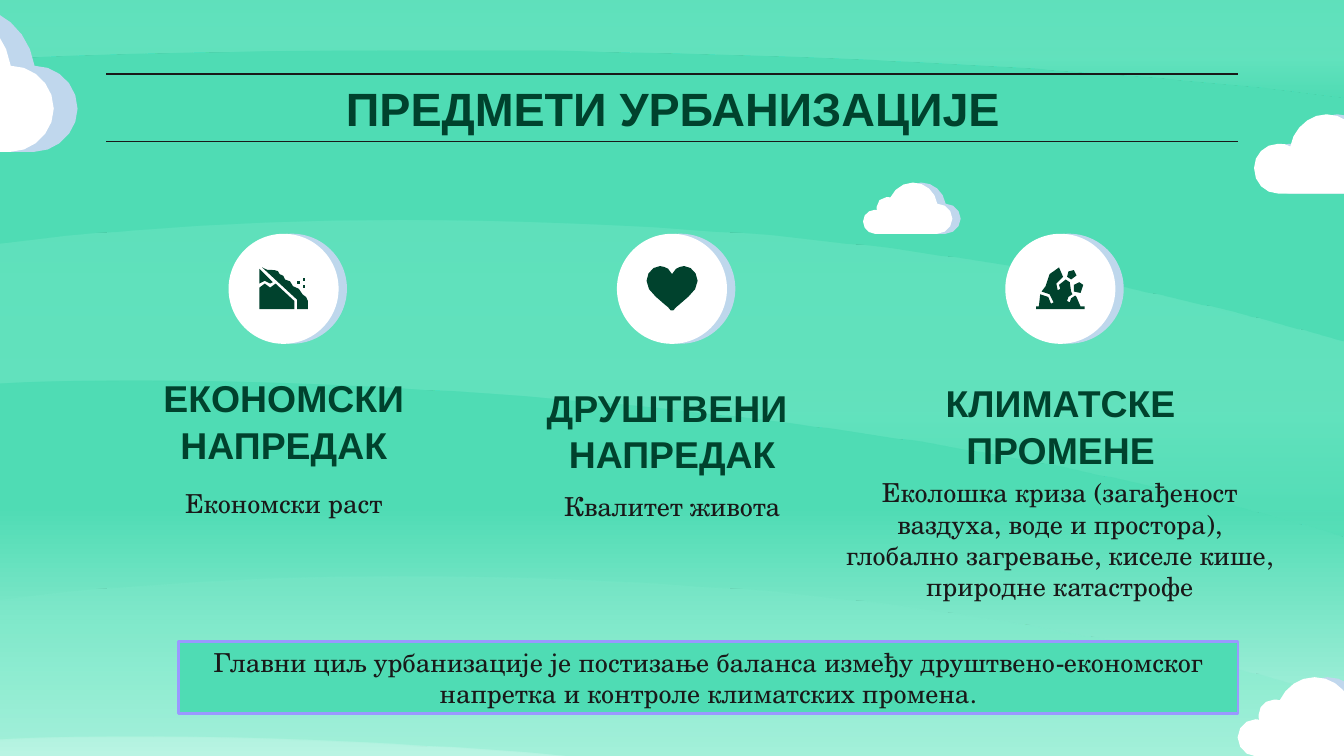
import math

import pptx
import pptx.util
import pptx.dml.color
import pptx.enum.shapes
import pptx.enum.text
import pptx.oxml
import pptx.oxml.ns
import lxml.etree

Cm = pptx.util.Cm
Pt = pptx.util.Pt

COLORS = {
    "forest": "00422D", "ink": "191919", "white": "FFFFFF", "shade": "C0D7ED",
    "mint": "4FDCB4", "wave": "80EBCC", "pale": "B9F4E3", "violet": "9A99FF",
}
FONTS = {
    "title": {"name": "Arial", "size": Pt(25), "bold": True},
    "heading": {"name": "Arial", "size": Pt(20), "bold": True},
    "body": {"name": "TeX Gyre Schola", "size": Pt(14), "bold": False},
}
FONT_COLORS = {"title": "forest", "heading": "forest", "body": "ink"}
LINE_SPACING = {"title": 1.0, "heading": 1.04, "body": 1.0}
FRAME = {
    "word_wrap": True,
    "vertical_anchor": pptx.enum.text.MSO_ANCHOR.MIDDLE,
    "margin_left": Cm(0.25), "margin_right": Cm(0.25),
    "margin_top": Cm(0.25), "margin_bottom": Cm(0.25),
}

UNIT = Cm(2.54) / 100
COLUMN_LEFT, COLUMN_STEP, COLUMN_WIDTH = 2.01, 7.34, 6.71
BADGE_INSET, BADGE_TOP, BADGE_SIZE = 2.31, 4.42, 2.08

WAVE_STOPS = [(0, "wave", 32), (60, "wave", 39), (100, "mint", 42)]
SKY_STOPS = [(0, "pale", 100), (33, "mint", 100), (100, "mint", 100)]

TOP_WAVE = [(0, 0), (1000, 0), (1000, 76), (982, 74, 963, 71, 945, 69),
            (773, 51, 595, 44, 412, 41), (373, 41, 334, 41, 295, 41),
            (196, 41, 97, 42, 0, 47)]
HILL = [(298, 0), (361, 0, 424, 2, 486, 5), (663, 14, 838, 43, 1000, 90),
        (1000, 235), (961, 223, 920, 212, 879, 202),
        (691, 158, 492, 135, 293, 124), (233, 121, 172, 119, 111, 119),
        (74, 119, 37, 119, 0, 121), (0, 17), (98, 5, 198, 0, 298, 0)]
TALL_CLOUD = [(106, 0), (85, 0, 66, 14, 58, 32), (56, 31, 53, 31, 50, 31),
              (38, 31, 29, 41, 29, 52), (29, 55, 29, 57, 30, 59),
              (28, 58, 27, 58, 25, 58), (12, 58, 0, 69, 0, 83),
              (0, 97, 12, 109, 25, 109), (158, 109),
              (175, 109, 190, 94, 190, 77), (190, 59, 175, 45, 158, 45),
              (154, 19, 132, 0, 106, 0)]
SMALL_CLOUD = [(54, 0), (41, 0, 29, 11, 27, 24), (25, 22, 21, 22, 18, 22),
               (8, 22, 0, 30, 0, 40), (0, 51, 8, 59, 18, 59), (82, 59),
               (91, 59, 98, 52, 98, 42), (98, 32, 91, 25, 82, 25),
               (79, 11, 68, 0, 54, 0)]
CLOUDS = [(TALL_CLOUD, 23.39, 12.8, 0.54), (TALL_CLOUD, -3.81, 0.1, 1),
          (SMALL_CLOUD, 23.7, 2.16, 1), (TALL_CLOUD, 16.31, 3.45, 0.35)]

LANDSLIDE = [
    [(25, 25), (51, 49), (51, 56), (59, 56), (59, 50), (59, 48, 57, 46, 55, 45),
     (54, 42, 51, 39, 48, 39), (47, 36, 45, 34, 42, 34),
     (42, 32, 40, 30, 38, 30), (38, 28, 36, 27, 34, 27),
     (30, 27, 27, 27, 25, 25)],
    [(27, 37), (23, 40), (23, 56), (49, 56), (49, 50), (35, 37), (31, 40)],
    [(23, 26), (23, 37), (27, 35), (31, 37), (33, 36)],
] + [[(x, y), (x, y + 2), (x + 2, y + 2), (x + 2, y)]
     for x, y in [(51, 35), (55, 38), (55, 33)]]
HEART = [[(32, 24), (27, 24, 22, 29, 22, 35), (22, 42, 28, 46, 36, 53),
          (37, 54, 39, 55, 40, 57), (42, 57), (43, 55, 45, 54, 46, 53),
          (54, 46, 60, 42, 60, 35), (60, 29, 55, 24, 50, 24),
          (48, 24, 46, 25, 44, 26), (43, 27, 42, 29, 41, 30),
          (40, 29, 39, 27, 38, 26), (36, 25, 34, 24, 32, 24)]]
ROCKFALL = [
    [(40, 25), (33, 30), (30, 39), (27, 43), (33, 45), (36, 51), (34, 52),
     (32, 47), (26, 45), (25, 54), (23, 54), (23, 56), (59, 56), (59, 54),
     (56, 54), (53, 47), (52, 46), (49, 48), (48, 51), (46, 50), (47, 47),
     (50, 45), (49, 43), (48, 36), (45, 34), (40, 38), (41, 41), (39, 42),
     (38, 37), (43, 32)],
    [(55, 36), (51, 38), (51, 43), (56, 44), (58, 38)],
    [(51, 27), (47, 28), (46, 32), (49, 34), (53, 31)],
]

TOPICS = [
    (LANDSLIDE, ["ЕКОНОМСКИ", "НАПРЕДАК"], 1.6,
     "Економски раст", (2.01, 8.92, 6.71, 1.17)),
    (HEART, ["ДРУШТВЕНИ ", "НАПРЕДАК"], 1.96,
     "Квалитет живота", (9.35, 9.09, 6.71, 0.97)),
    (ROCKFALL, ["КЛИМАТСКЕ", "ПРОМЕНЕ"], 1.8,
     "Еколошка криза (загађеност ваздуха, воде и простора), глобално "
     "загревање, киселе кише, природне катастрофе", (15.65, 8.71, 8.76, 2.97)),
]
GOAL = ("Главни циљ урбанизације је постизање баланса између "
        "друштвено-економског напретка и контроле климатских промена.")


def rgb(color):
    return pptx.dml.color.RGBColor.from_string(COLORS[color])


def paint(shape, color):
    shape.shadow.inherit = False
    shape.fill.solid()
    shape.fill.fore_color.rgb = rgb(color)
    shape.line.fill.background()


def paint_gradient(fill, owner, stops, angle):
    fill.gradient()
    fill.gradient_angle = angle
    stop_list = owner.xpath(".//a:gsLst")[0]
    for stop in list(stop_list):
        stop_list.remove(stop)
    for position, color, opacity in stops:
        stop_list.append(pptx.oxml.parse_xml(
            f'<a:gs {pptx.oxml.ns.nsdecls("a")} pos="{position * 1000}">'
            f'<a:srgbClr val="{COLORS[color]}"><a:alpha val="{opacity * 1000}"/>'
            '</a:srgbClr></a:gs>'))


def flatten(outline, scale):
    points = [outline[0]]
    for segment in outline[1:]:
        if len(segment) == 2:
            points.append(segment)
            continue
        nodes = [points[-1], segment[:2], segment[2:4], segment[4:]]
        steps = min(6, 1 + math.ceil(math.dist(nodes[0], nodes[3]) * scale / 12))
        for step in range(1, steps + 1):
            t = step / steps
            weights = ((1 - t) ** 3, 3 * t * (1 - t) ** 2, 3 * t * t * (1 - t), t ** 3)
            points.append(tuple(sum(w * node[axis] for w, node in zip(weights, nodes))
                                for axis in (0, 1)))
    return points


def add_outline(slide, outline, left, top, color, scale=1):
    points = [(Cm(left) + x * UNIT * scale, Cm(top) + y * UNIT * scale)
              for x, y in flatten(outline, scale)]
    builder = slide.shapes.build_freeform(*points[0])
    builder.add_line_segments(points[1:], close=True)
    figure = builder.convert_to_shape()
    paint(figure, color)
    return figure


def add_wave(slide, outline, top):
    wave = add_outline(slide, outline, 0, top, "wave")
    paint_gradient(wave.fill, wave._element, WAVE_STOPS, 270)


def add_cloud(slide, outline, left, top, scale):
    shift = 0.45 * scale if outline is TALL_CLOUD else 0.2
    add_outline(slide, outline, left + shift, top, "shade", scale)
    add_outline(slide, outline, left, top, "white", scale)


def add_rule(slide, height):
    rule = slide.shapes.add_connector(pptx.enum.shapes.MSO_CONNECTOR.STRAIGHT,
                                      Cm(2.01), Cm(height), Cm(23.39), Cm(height))
    rule.line.color.rgb = rgb("ink")
    rule.line.width = Pt(0.75)
    lxml.etree.SubElement(rule._element.spPr, pptx.oxml.ns.qn("a:effectLst"))


def write(frame, lines, style):
    for attribute, value in FRAME.items():
        setattr(frame, attribute, value)
    for index, line in enumerate(lines):
        paragraph = frame.add_paragraph() if index else frame.paragraphs[0]
        paragraph.alignment = pptx.enum.text.PP_ALIGN.CENTER
        paragraph.line_spacing = LINE_SPACING[style]
        run = paragraph.add_run()
        run.text = line
        run.font.color.rgb = rgb(FONT_COLORS[style])
        for attribute, value in FONTS[style].items():
            setattr(run.font, attribute, value)


def add_text(slide, box, lines, style):
    write(slide.shapes.add_textbox(*map(Cm, box)).text_frame, lines, style)


def add_badge(slide, left, icon):
    disc = slide.shapes.add_shape(pptx.enum.shapes.MSO_SHAPE.OVAL, Cm(left),
                                  Cm(BADGE_TOP), Cm(BADGE_SIZE), Cm(BADGE_SIZE))
    paint(disc, "white")
    disc._element.spPr.find(pptx.oxml.ns.qn("a:effectLst")).append(pptx.oxml.parse_xml(
        f'<a:outerShdw {pptx.oxml.ns.nsdecls("a")} blurRad="0" dist="{Pt(4.5)}" '
        f'dir="21540000" algn="bl" rotWithShape="0"><a:srgbClr val="{COLORS["shade"]}">'
        '<a:alpha val="99000"/></a:srgbClr></a:outerShdw>'))
    for piece in icon:
        add_outline(slide, piece, left, BADGE_TOP, "forest")


def add_goal(slide):
    goal = slide.shapes.add_shape(pptx.enum.shapes.MSO_SHAPE.RECTANGLE,
                                  Cm(3.38), Cm(12.12), Cm(20.02), Cm(1.37))
    paint(goal, "mint")
    goal.line.color.rgb = rgb("violet")
    goal.line.width = Pt(1.5)
    write(goal.text_frame, [GOAL], "body")


def main():
    deck = pptx.Presentation()
    deck.slide_width, deck.slide_height = Cm(25.4), Cm(14.29)
    slide = deck.slides.add_slide(deck.slide_layouts[6])
    paint_gradient(slide.background.fill, slide._element, SKY_STOPS, 90)
    for outline, top in [(TOP_WAVE, -0.08), (HILL, 10.9), (HILL, 4.17)]:
        add_wave(slide, outline, top)
    for cloud in CLOUDS:
        add_cloud(slide, *cloud)
    for height in (1.4, 2.67):
        add_rule(slide, height)
    add_text(slide, (2.01, 1.24, 21.41, 1.6), ["ПРЕДМЕТИ УРБАНИЗАЦИЈЕ"], "title")
    for index, (icon, heading, height, detail, detail_box) in enumerate(TOPICS):
        left = COLUMN_LEFT + index * COLUMN_STEP
        add_text(slide, (left, 7.14, COLUMN_WIDTH, height), heading, "heading")
        add_text(slide, detail_box, [detail], "body")
        add_badge(slide, left + BADGE_INSET, icon)
    add_goal(slide)
    deck.save("out.pptx")


if __name__ == "__main__":
    main()
